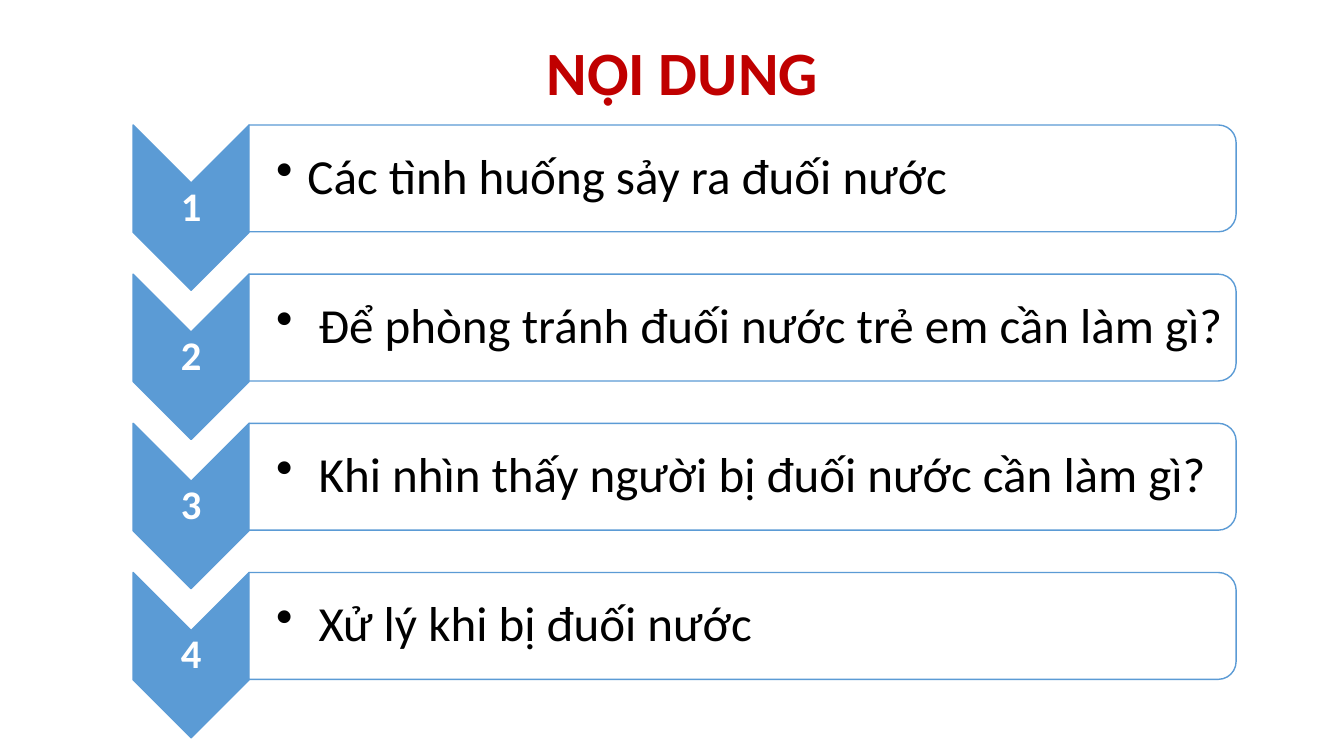
from lxml import etree
from pptx import Presentation
from pptx.dml.color import RGBColor
from pptx.enum.shapes import MSO_SHAPE
from pptx.enum.text import MSO_ANCHOR, PP_ALIGN
from pptx.oxml.ns import qn
from pptx.util import Inches, Pt

RED = RGBColor(0xC0, 0x00, 0x00)
BLUE = RGBColor(0x5B, 0x9B, 0xD5)
WHITE = RGBColor(0xFF, 0xFF, 0xFF)
BLACK = RGBColor(0x00, 0x00, 0x00)
FONT = "Calibri"

TOPICS = [
    ("Các tình huống sảy ra đuối nước", 0.31),
    ("Để phòng tránh đuối nước trẻ em cần làm gì?", 0.42),
    ("Khi nhìn thấy người bị đuối nước cần làm gì?", 0.42),
    ("Xử lý khi bị đuối nước", 0.42),
]
ROW_PITCH = 1.48
CHEVRON_WIDTH = 1.15
CHEVRON_HEIGHT = 1.64
BAR_HEIGHT = 1.06


def add_run(paragraph, text, size, color, bold=False):
    paragraph.line_spacing = 0.9
    run = paragraph.add_run()
    run.text = text
    run.font.name = FONT
    run.font.size = Pt(size)
    run.font.bold = bold
    run.font.color.rgb = color


def add_turned_shape(shapes, kind, left, top, width, height, fill):
    shape = shapes.add_shape(
        kind,
        Inches(left + (width - height) / 2),
        Inches(top + (height - width) / 2),
        Inches(height),
        Inches(width),
    )
    shape.rotation = 90
    shape.shadow.inherit = False
    shape.fill.solid()
    shape.fill.fore_color.rgb = fill
    shape.line.color.rgb = BLUE
    shape.line.width = Pt(1)
    return shape


def add_label(shapes, left, top, width, height, left_inset=0.02):
    frame = shapes.add_textbox(
        Inches(left), Inches(top), Inches(width), Inches(height)
    ).text_frame
    frame.word_wrap = True
    frame.vertical_anchor = MSO_ANCHOR.MIDDLE
    frame.margin_left = Inches(left_inset)
    frame.margin_right = frame.margin_top = frame.margin_bottom = Inches(0.02)
    return frame.paragraphs[0]


def add_bullet(paragraph, indent):
    properties = paragraph._p.get_or_add_pPr()
    properties.set("marL", str(Inches(indent)))
    properties.set("indent", str(-Inches(indent)))
    etree.SubElement(properties, qn("a:buChar")).set("char", "•")


def set_opacity(shape, percent):
    color = shape.fill._xPr.find(qn("a:solidFill"))[0]
    etree.SubElement(color, qn("a:alpha")).set("val", str(percent * 1000))


def add_title(slide, left, top, width, height):
    title = slide.shapes.title
    title.left, title.top = Inches(left), Inches(top)
    title.width, title.height = Inches(width), Inches(height)
    title.text_frame.vertical_anchor = MSO_ANCHOR.MIDDLE
    paragraph = title.text_frame.paragraphs[0]
    paragraph.alignment = PP_ALIGN.LEFT
    add_run(paragraph, "NỘI DUNG", 44, RED, bold=True)


def add_topic(shapes, left, top, width, number, text, indent):
    add_turned_shape(
        shapes, MSO_SHAPE.CHEVRON, left, top, CHEVRON_WIDTH, CHEVRON_HEIGHT, BLUE
    )
    label = add_label(shapes, left, top + 0.58, CHEVRON_WIDTH, 0.49)
    label.alignment = PP_ALIGN.CENTER
    add_run(label, str(number), 29, WHITE, bold=True)

    bar_left = left + CHEVRON_WIDTH
    bar_width = width - CHEVRON_WIDTH
    bar = add_turned_shape(
        shapes, MSO_SHAPE.ROUND_2_SAME_RECTANGLE,
        bar_left, top, bar_width, BAR_HEIGHT, WHITE,
    )
    set_opacity(bar, 90)
    topic = add_label(shapes, bar_left, top + 0.05, bar_width - 0.05, 0.96, 0.27)
    add_bullet(topic, indent)
    add_run(topic, text, 35, BLACK)


def add_topic_list(slide, left, top, width):
    shapes = slide.shapes.add_group_shape().shapes
    for index, (text, indent) in enumerate(TOPICS):
        add_topic(
            shapes, left, top + index * ROW_PITCH, width, index + 1, text, indent
        )


def main():
    presentation = Presentation()
    presentation.slide_width = Inches(13.33)
    presentation.slide_height = Inches(7.5)
    slide = presentation.slides.add_slide(presentation.slide_layouts[5])
    add_title(slide, 5.32, 0.36, 3.91, 0.77)
    add_topic_list(slide, 1.32, 1.24, 10.94)
    presentation.save("out.pptx")


if __name__ == "__main__":
    main()
